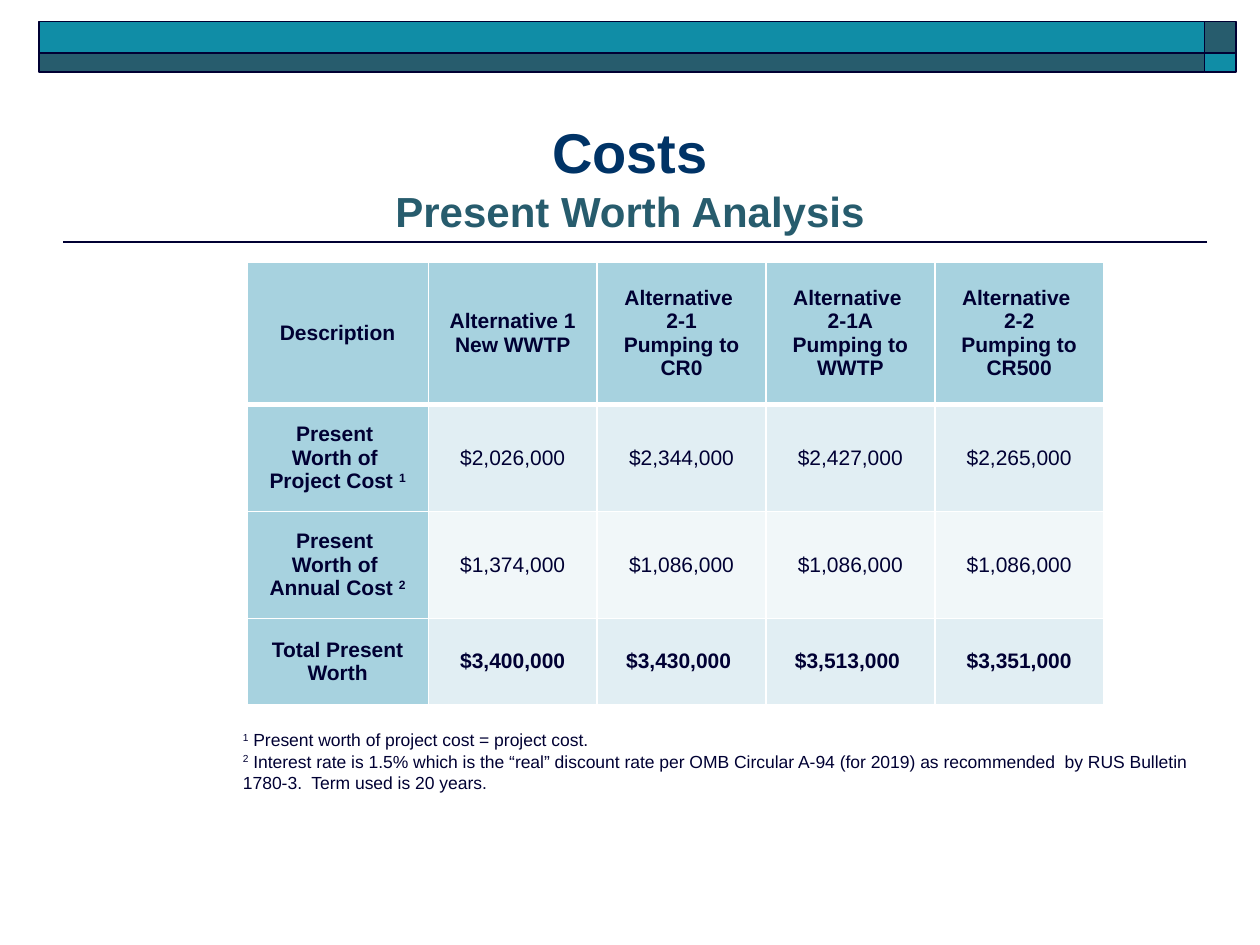
"""Build the present worth cost slide with its table and footnotes."""
from lxml import etree
from pptx import Presentation
from pptx.dml.color import RGBColor
from pptx.enum.shapes import MSO_CONNECTOR, MSO_SHAPE
from pptx.enum.text import MSO_ANCHOR, PP_ALIGN
from pptx.oxml.ns import qn
from pptx.util import Inches, Pt

RECT, LINE = MSO_SHAPE.RECTANGLE, MSO_CONNECTOR.STRAIGHT
MID, LOW = MSO_ANCHOR.MIDDLE, MSO_ANCHOR.BOTTOM
LEFT, CENTER = PP_ALIGN.LEFT, PP_ALIGN.CENTER

INK = RGBColor(0x00, 0x00, 0x33)
NAVY = RGBColor(0x00, 0x33, 0x66)
SLATE = RGBColor(0x27, 0x5C, 0x6D)
TEAL = RGBColor(0x10, 0x8D, 0xA6)
HEAD = RGBColor(0xA7, 0xD2, 0xDF)
BANDS = [RGBColor(0xF1, 0xF7, 0xF9), RGBColor(0xE1, 0xEE, 0xF3)]

TITLE = [("Costs", 32, NAVY), ("Present Worth Analysis", 24, SLATE)]
BARS = [
    (9.56, 0.17, 0.25, 0.25, SLATE),
    (0.31, 0.17, 9.25, 0.25, TEAL),
    (0.31, 0.42, 9.25, 0.15, SLATE),
    (9.56, 0.42, 0.25, 0.15, TEAL),
]
ROWS = [
    ["Description", "Alternative 1\nNew WWTP", "Alternative \n2-1\nPumping to CR0",
     "Alternative \n2-1A\nPumping to WWTP", "Alternative \n2-2\nPumping to CR500"],
    ["Present \nWorth of \nProject Cost ^1", "$2,026,000", "$2,344,000",
     "$2,427,000", "$2,265,000"],
    ["Present \nWorth of \nAnnual Cost ^2", "$1,374,000", "$1,086,000",
     "$1,086,000", "$1,086,000"],
    ["Total Present Worth", "$3,400,000", "$3,430,000 ", "$3,513,000 ", "$3,351,000"],
]
WIDTHS = [1.44] + [1.34] * 4
HEIGHTS = [1.13, 0.85, 0.85, 0.68]
NOTES = (
    "^1^ Present worth of project cost = project cost.\n"
    "^2^ Interest rate is 1.5% which is the “real” discount rate per OMB Circular A-94 "
    "(for 2019) as recommended  by RUS Bulletin 1780-3.  Term used is 20 years."
)


def put(item, **vals):
    for key, val in vals.items():
        setattr(item, key, val)


def add_run(para, text, size, color, bold):
    run = para.add_run()
    run.text = text
    put(run.font, name="Arial", size=Pt(size), bold=bold)
    run.font.color.rgb = color
    return run


def write(frame, text, size, bold, align):
    """Fill a frame; text between carets is superscript."""
    for i, line in enumerate(text.split("\n")):
        para = frame.add_paragraph() if i else frame.paragraphs[0]
        para.alignment = align
        for j, part in enumerate(line.split("^")):
            if part:
                run = add_run(para, part, size, INK, bold)
                if j % 2:
                    run.font._element.set("baseline", "30000")


def edge(cell, widths):
    props = cell._tc.get_or_add_tcPr()
    for i, (side, width) in enumerate(widths.items()):
        line = etree.Element(qn("a:ln" + side), w=str(Pt(width)))
        fill = etree.SubElement(line, qn("a:solidFill"))
        etree.SubElement(fill, qn("a:srgbClr"), val="FFFFFF")
        props.insert(i, line)


def add_bars(slide):
    for *box, color in BARS:
        bar = slide.shapes.add_shape(RECT, *map(Inches, box))
        bar.shadow.inherit = False
        bar.fill.solid()
        bar.fill.fore_color.rgb = color
        bar.line.color.rgb = INK
        bar.line.width = Pt(1)
    rule = slide.shapes.add_connector(LINE, *map(Inches, (9.58, 1.92, 0.5, 1.92)))
    rule.line.color.rgb = INK
    rule.line.width = Pt(1)
    etree.SubElement(rule._element.spPr, qn("a:effectLst"))


def add_title(slide):
    title = slide.shapes.title
    put(title, left=Inches(0.5), top=Inches(0.67), width=Inches(9), height=Inches(1.25))
    title.text_frame.vertical_anchor = LOW
    para = title.text_frame.paragraphs[0]
    para.alignment = CENTER
    for i, (text, size, color) in enumerate(TITLE):
        if i:
            para.add_line_break()
        add_run(para, text, size, color, True)


def add_costs(slide):
    box = (1.96, 2.08, sum(WIDTHS), sum(HEIGHTS))
    table = slide.shapes.add_table(len(ROWS), len(WIDTHS), *map(Inches, box)).table
    for col, width in zip(table.columns, WIDTHS):
        col.width = Inches(width)
    for row, height in zip(table.rows, HEIGHTS):
        row.height = Inches(height)
    last = len(ROWS) - 1
    for r, texts in enumerate(ROWS):
        for c, text in enumerate(texts):
            cell = table.cell(r, c)
            put(cell, vertical_anchor=MID, margin_left=Inches(0.07),
                margin_right=Inches(0.07), margin_top=0, margin_bottom=0)
            cell.fill.solid()
            cell.fill.fore_color.rgb = HEAD if r == 0 or c == 0 else BANDS[r % 2]
            edge(cell, {"L": 1, "R": 1, "T": 3 if r == 1 else 1, "B": 1 if r else 3})
            write(cell.text_frame, text, 12, c == 0 or r in (0, last), CENTER)


def add_notes(slide):
    box = slide.shapes.add_textbox(*map(Inches, (1.83, 5.74, 7.8, 0.61)))
    box.text_frame.word_wrap = True
    write(box.text_frame, NOTES, 10, False, LEFT)


def main():
    deck = Presentation()
    put(deck, slide_width=Inches(10), slide_height=Inches(7.5))
    slide = deck.slides.add_slide(deck.slide_layouts[5])
    for add in (add_bars, add_title, add_notes, add_costs):
        add(slide)
    deck.save("out.pptx")


if __name__ == "__main__":
    main()
